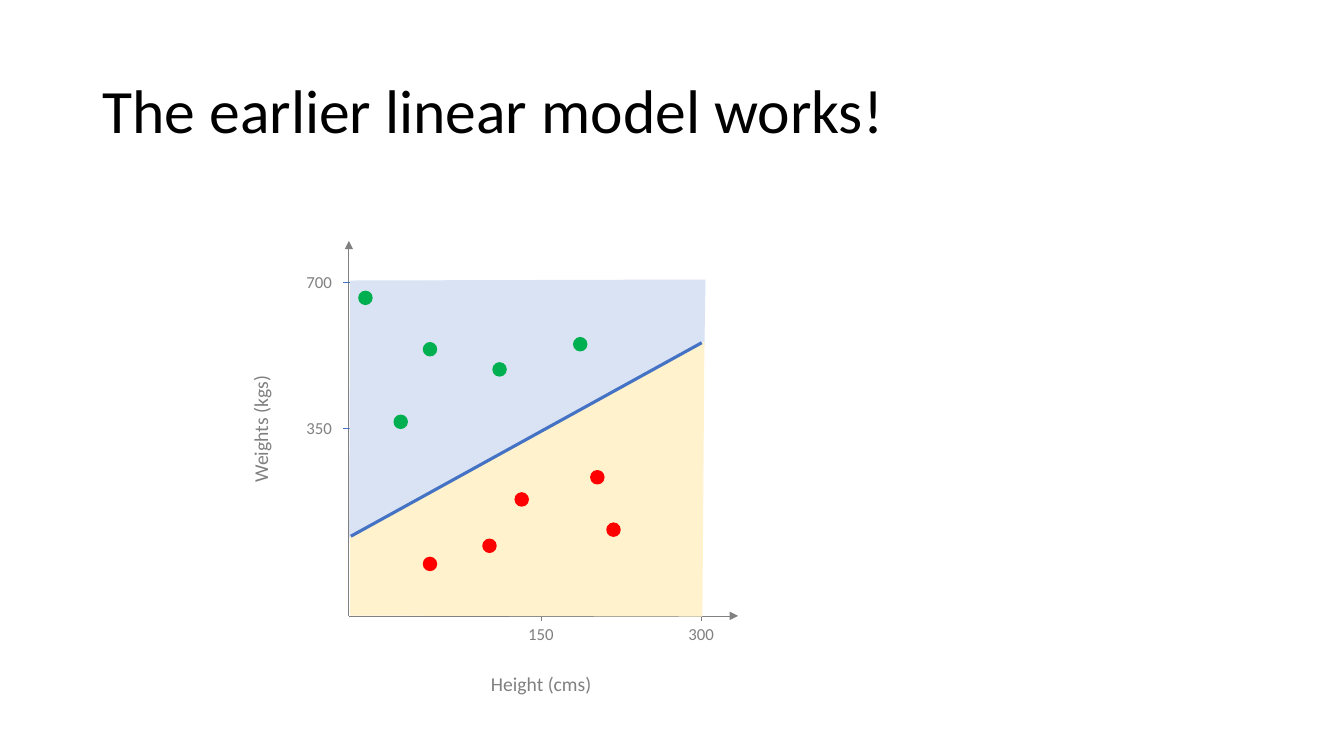
import pptx
import pptx.util
import pptx.dml.color
import pptx.enum.shapes
import pptx.enum.text
from lxml import etree
from pptx.util import Inches

GREY, BLUE = "808080", "4472C4"
GREEN, RED = "00B050", "FF0000"
PALE_BLUE, PALE_YELLOW = "DAE3F3", "FFF2CC"


def rgb(hex_colour):
    return pptx.dml.color.RGBColor.from_string(hex_colour)


class SlideBuilder:
    font = "Calibri"
    dot_size = 0.13

    def __init__(self, slide):
        self.shapes = slide.shapes

    def text(self, left, top, width, height, words, size, color=GREY,
             rotation=0, wrap=False, spacing=None):
        sp = self.shapes.add_textbox(*map(Inches, (left, top, width, height)))
        sp.rotation = rotation
        tf = sp.text_frame
        tf.word_wrap = wrap
        if wrap:
            tf.vertical_anchor = pptx.enum.text.MSO_ANCHOR.MIDDLE
        else:
            tf.auto_size = pptx.enum.text.MSO_AUTO_SIZE.SHAPE_TO_FIT_TEXT
        p = tf.paragraphs[0]
        p.line_spacing = spacing
        r = p.add_run()
        r.text = words
        r.font.name = self.font
        r.font.size = pptx.util.Pt(size)
        r.font.color.rgb = rgb(color)

    def line(self, start, end, color=GREY, width=0.5, arrow=False):
        cn = self.shapes.add_connector(pptx.enum.shapes.MSO_CONNECTOR.STRAIGHT,
                                       *map(Inches, (*start, *end)))
        cn.line.color.rgb = rgb(color)
        cn.line.width = pptx.util.Pt(width)
        if arrow:
            tail = etree.SubElement(cn.line._get_or_add_ln(), pptx.oxml.ns.qn("a:tailEnd"))
            tail.set("type", "triangle")
        etree.SubElement(cn._element.spPr, pptx.oxml.ns.qn("a:effectLst"))

    def paint(self, sp, color):
        sp.shadow.inherit = False
        sp.fill.solid()
        sp.fill.fore_color.rgb = rgb(color)
        sp.line.color.rgb = rgb(color)
        sp.line.width = pptx.util.Pt(1)

    def region(self, points, color):
        corners = [(Inches(x), Inches(y)) for x, y in points]
        builder = self.shapes.build_freeform(*corners[0])
        builder.add_line_segments(corners[1:], close=True)
        self.paint(builder.convert_to_shape(), color)

    def dot(self, left, top, color):
        sp = self.shapes.add_shape(
            pptx.enum.shapes.MSO_SHAPE.OVAL,
            *map(Inches, (left, top, self.dot_size, self.dot_size)))
        self.paint(sp, color)


def main():
    prs = pptx.Presentation()
    prs.slide_width, prs.slide_height = Inches(13.33), Inches(7.5)
    s = SlideBuilder(prs.slides.add_slide(prs.slide_layouts[6]))

    s.text(0.92, 0.4, 11.5, 1.45, "The earlier linear model works!", 44,
           "000000", wrap=True, spacing=0.9)
    s.text(4.77, 6.62, 1.21, 0.34, "Height (cms)", 14)
    s.text(1.95, 4.08, 1.27, 0.34, "Weights (kgs)", 14, rotation=270)

    origin = (3.46, 6.11)
    s.line(origin, (3.46, 2.39), arrow=True)
    s.line(origin, (7.32, 6.11), arrow=True)
    for x, label in ((5.37, "150"), (6.96, "300")):
        s.line((x, 6.06), (x, 6.16))
        s.text(x - 0.23, 6.14, 0.46, 0.3, label, 12)
    for y, label in ((4.25, "350"), (2.8, "700")):
        s.line((3.52, y), (3.4, y), BLUE)
        s.text(2.94, y - 0.15, 0.46, 0.3, label, 12)

    s.region([(6.98, 3.43), (6.99, 2.78), (3.48, 2.79), (3.47, 5.33)], PALE_BLUE)
    s.region([(3.48, 5.32), (3.48, 6.1), (6.96, 6.11), (6.98, 3.4)], PALE_YELLOW)
    s.line((3.48, 5.32), (6.96, 3.4), BLUE, 2.25)

    dots = {
        GREEN: [(3.56, 2.89), (3.91, 4.12), (4.2, 3.4), (4.89, 3.6), (5.69, 3.35)],
        RED: [(5.86, 4.67), (6.02, 5.19), (4.79, 5.35), (5.11, 4.89), (4.2, 5.53)],
    }
    for color, places in dots.items():
        for left, top in places:
            s.dot(left, top, color)

    prs.save("out.pptx")


if __name__ == "__main__":
    main()
